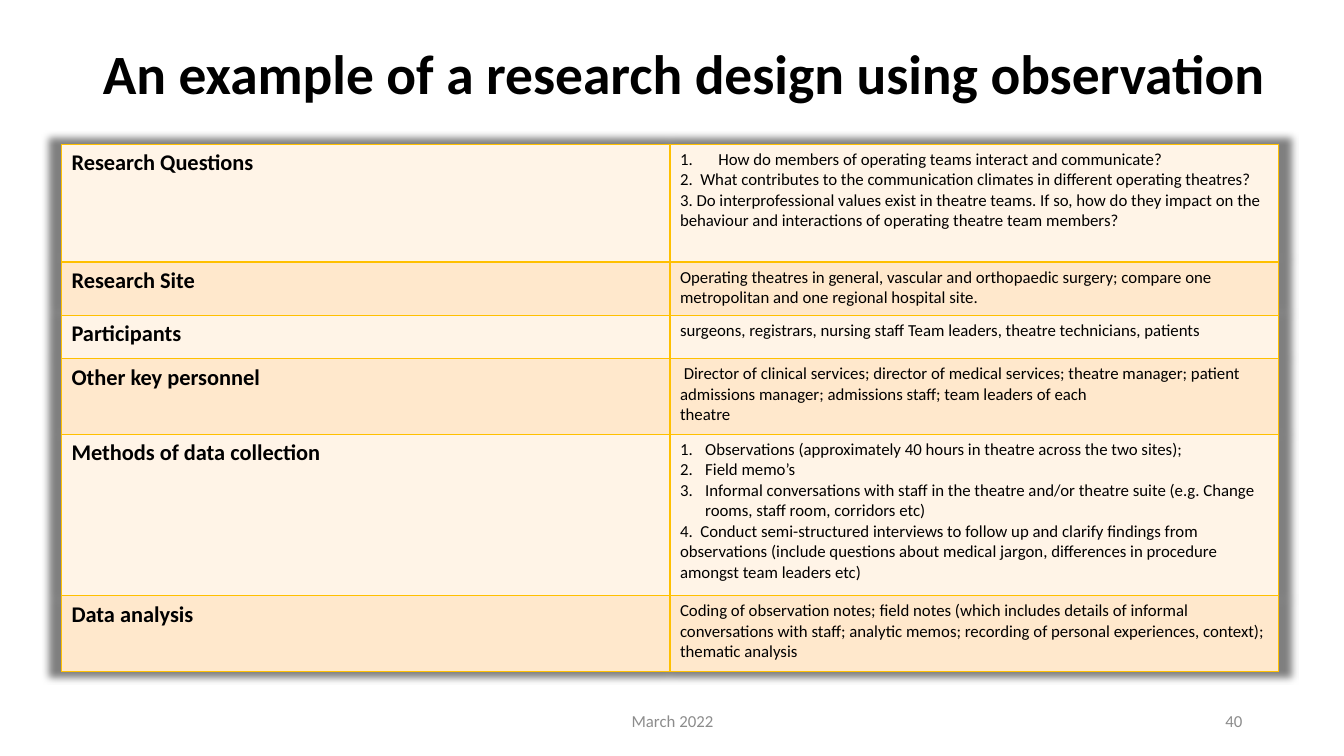
from lxml import etree
from pptx import Presentation
from pptx import util as u
from pptx.dml.color import RGBColor
from pptx.enum import text
from pptx.oxml import parse_xml
from pptx.oxml.ns import qn

PX = 9144
NS = 'xmlns:a="http://schemas.openxmlformats.org/drawingml/2006/main"'
BLACK, GREY, GOLD = "000000", "8C8C8C", "FFC000"
BANDS = ("FFF4E7", "FFE8CC")

# Each row: heading, height, paragraphs as (wording, hanging indent or 0)
DESIGN = [
    ("Research Questions", 117, [
        ("How do members of operating teams interact and communicate?", 38),
        ("2.  What contributes to the communication climates in different operating theatres?", 0),
        ("3. Do interprofessional values exist in theatre teams. If so, how do they impact on the "
         "behaviour and interactions of operating theatre team members?", 0)]),
    ("Research Site", 53, [
        ("Operating theatres in general, vascular and orthopaedic surgery; compare one "
         "metropolitan and one regional hospital site.", 0)]),
    ("Participants", 43, [
        ("surgeons, registrars, nursing staff Team leaders, theatre technicians, patients", 0)]),
    ("Other key personnel", 75, [
        (" Director of clinical services; director of medical services; theatre manager; patient "
         "admissions manager; admissions staff; team leaders of each", 0),
        ("theatre", 0)]),
    ("Methods of data collection", 160, [
        ("Observations (approximately 40 hours in theatre across the two sites);", 25),
        ("Field memo’s", 25),
        ("Informal conversations with staff in the theatre and/or theatre suite (e.g. Change "
         "rooms, staff room, corridors etc)", 25),
        ("4.  Conduct semi-structured interviews to follow up and clarify findings from "
         "observations (include questions about medical jargon, differences in procedure "
         "amongst team leaders etc)", 0)]),
    ("Data analysis", 75, [
        ("Coding of observation notes; field notes (which includes details of informal "
         "conversations with staff; analytic memos; recording of personal experiences, context); "
         "thematic analysis", 0)]),
]


def px(*lengths):
    """Turn pixel lengths into EMU."""
    return [u.Emu(length * PX) for length in lengths]


def color(value):
    """Turn a hex string into a colour."""
    return RGBColor.from_string(value)


def style(paragraph, size, hue=BLACK, bold=False):
    """Format every run of a paragraph."""
    for run in paragraph.runs:
        run.font.name, run.font.size, run.font.bold = "Calibri", u.Pt(size), bold
        run.font.color.rgb = color(hue)


def add_title(slide, wording):
    """Place and format the title placeholder."""
    title = slide.shapes.title
    title.left, title.top, title.width, title.height = px(92, 40, 1207, 145)
    frame = title.text_frame
    frame.text = wording
    frame.word_wrap = True
    frame.auto_size = text.MSO_AUTO_SIZE.NONE
    frame.vertical_anchor = text.MSO_ANCHOR.MIDDLE
    line = frame.paragraphs[0]
    line.alignment, line.line_spacing = text.PP_ALIGN.LEFT, 0.9
    style(line, 39.6, bold=True)


def add_footer(slide, wording, left, width, alignment):
    """Add one grey footer text."""
    frame = slide.shapes.add_textbox(*px(left, 695, width, 40)).text_frame
    frame.text = wording
    frame.word_wrap = True
    frame.vertical_anchor = text.MSO_ANCHOR.MIDDLE
    frame.paragraphs[0].alignment = alignment
    style(frame.paragraphs[0], 12, GREY)


def number(paragraph, indent):
    """Give a paragraph an automatic number and a hanging indent."""
    properties = paragraph._p.get_or_add_pPr()
    properties.set("marL", str(indent * PX))
    properties.set("indent", str(-indent * PX))
    etree.SubElement(properties, qn("a:buFont"), typeface="+mj-lt")
    etree.SubElement(properties, qn("a:buAutoNum"), type="arabicPeriod")


def fill_cell(cell, entries, size, band, bold=False):
    """Write the paragraphs of a cell and set its fill and borders."""
    frame = cell.text_frame
    frame.text = "\n".join(wording for wording, _ in entries)
    for paragraph, (_, indent) in zip(frame.paragraphs, entries):
        style(paragraph, size, bold=bold)
        if indent:
            number(paragraph, indent)
    cell.fill.solid()
    cell.fill.fore_color.rgb = color(band)
    for place, side in enumerate("LRTB"):
        cell._tc.tcPr.insert(place, parse_xml(
            f'<a:ln{side} {NS} w="12700"><a:solidFill><a:srgbClr val="{GOLD}"/>'
            f'</a:solidFill></a:ln{side}>'))


def add_design_table(slide):
    """Add the research design table with its soft shadow."""
    height = sum(row[1] for row in DESIGN)
    table = slide.shapes.add_table(len(DESIGN), 2, *px(61, 143, 1207, height)).table
    table.first_row = table.horz_banding = False
    table._tbl.tblPr.insert(0, parse_xml(
        f'<a:effectLst {NS}><a:outerShdw blurRad="63500" sx="102000" sy="102000" algn="ctr" '
        'rotWithShape="0"><a:srgbClr val="000000"><a:alpha val="50000"/></a:srgbClr>'
        '</a:outerShdw></a:effectLst>'))
    for column in table.columns:
        column.width = u.Emu(1207 * PX // 2)
    for index, (heading, row_height, details) in enumerate(DESIGN):
        table.rows[index].height = px(row_height)[0]
        band = BANDS[index % 2]
        fill_cell(table.cell(index, 0), [(heading, 0)], 16, band, bold=True)
        fill_cell(table.cell(index, 1), details, 12, band)


def main():
    """Build and save the slide."""
    deck = Presentation()
    deck.slide_width, deck.slide_height = px(1333, 750)
    slide = deck.slides.add_slide(deck.slide_layouts[5])
    add_title(slide, "An example of a research design using observation\v")
    add_design_table(slide)
    add_footer(slide, "40", 942, 300, text.PP_ALIGN.RIGHT)
    add_footer(slide, "March 2022", 442, 450, text.PP_ALIGN.CENTER)
    deck.save("out.pptx")


if __name__ == "__main__":
    main()
